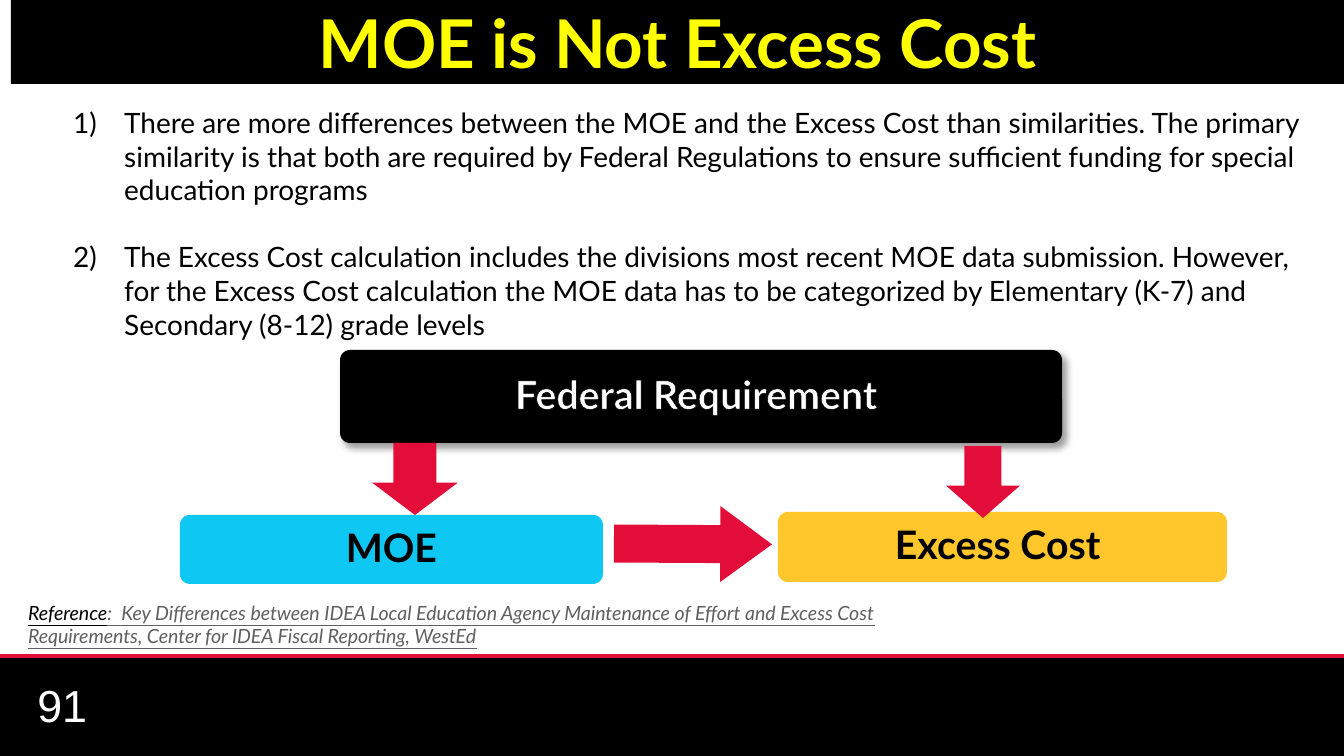
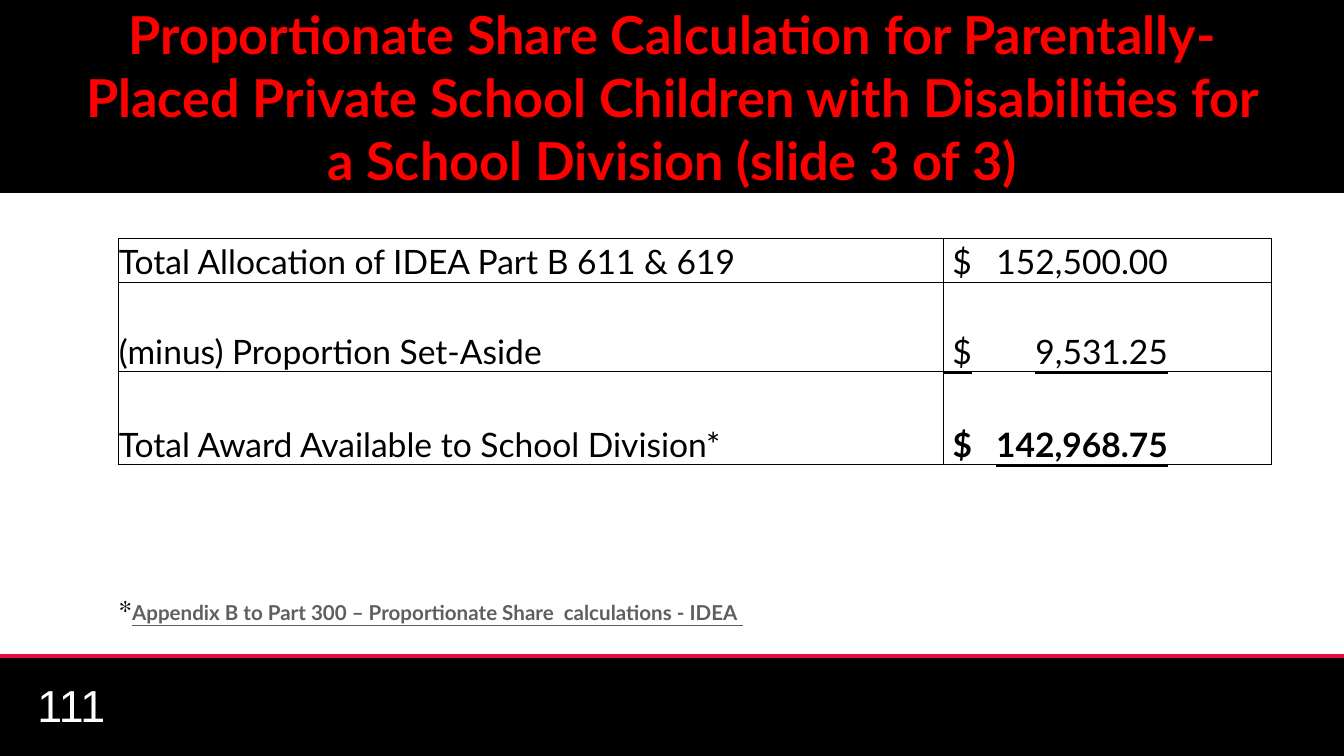
from dataclasses import dataclass, replace

from lxml.etree import SubElement
from pptx import Presentation
from pptx.dml.color import RGBColor as Color
from pptx.enum.shapes import MSO_CONNECTOR as Connector, MSO_SHAPE as Preset
from pptx.enum.text import MSO_ANCHOR as Anchor, PP_ALIGN as Align
from pptx.oxml.ns import qn
from pptx.util import Emu, Pt

SLIDE_WIDTH, SLIDE_HEIGHT = 1344, 756
SCALE = 9144000 / SLIDE_WIDTH
NO_TABLE_STYLE = "{2D5ABB26-0587-4C30-8999-92F81FD0307C}"


@dataclass(frozen=True)
class Theme:
    black: Color = Color(0, 0, 0)
    white: Color = Color(255, 255, 255)
    crimson: Color = Color.from_string("E20D38")
    yellow: Color = Color.from_string("FFFF00")
    red: Color = Color.from_string("FF0000")
    gold: Color = Color.from_string("FFC72C")
    cyan: Color = Color.from_string("0EC7F2")
    gray: Color = Color.from_string("5F5F5F")
    body_font: str = "Lato"
    number_font: str = "Arial"
    mark_font: str = "TeX Gyre Schola"
    title_size: float = 36
    long_title_size: float = 28
    number_size: float = 24
    box_size: float = 21
    table_size: float = 18
    body_size: float = 15
    mark_size: float = 14
    note_size: float = 11
    reference_size: float = 10.5


THEME = Theme()


@dataclass(frozen=True)
class TextStyle:
    size: float
    color: Color = THEME.black
    font: str = THEME.body_font
    bold: bool = False
    italic: bool = False
    underline: bool = False
    outlined: bool = False


def px(length):
    return Emu(round(length * SCALE))


def box(*lengths):
    return [px(length) for length in lengths]


# Text
def add_run(paragraph, text, style):
    run = paragraph.add_run()
    run.text = text
    font = run.font
    font.name, font.size = style.font, Pt(style.size)
    font.bold, font.italic, font.underline = style.bold, style.italic, style.underline
    font.color.rgb = style.color
    if style.outlined:
        line = SubElement(font._element, qn("a:ln"), w=str(Pt(0.75)))
        fill = SubElement(line, qn("a:solidFill"))
        SubElement(fill, qn("a:srgbClr"), val=str(THEME.black))
        font._element.insert(0, line)


def set_insets(holder, left, top, right, bottom):
    holder.margin_left, holder.margin_top = px(left), px(top)
    holder.margin_right, holder.margin_bottom = px(right), px(bottom)


def add_text_box(slide, bounds, anchor=Anchor.TOP):
    frame = slide.shapes.add_textbox(*box(*bounds)).text_frame
    frame.word_wrap = True
    frame.vertical_anchor = anchor
    return frame


def number_paragraph(paragraph, indent):
    properties = paragraph._p.get_or_add_pPr()
    properties.set("marL", str(px(indent)))
    properties.set("indent", str(-px(indent)))
    SubElement(properties, qn("a:buFont"), typeface="+mj-lt")
    SubElement(properties, qn("a:buAutoNum"), type="arabicParenR")


def add_right_tab(paragraph, position):
    tabs = SubElement(paragraph._p.get_or_add_pPr(), qn("a:tabLst"))
    SubElement(tabs, qn("a:tab"), pos=str(px(position)), algn="r")


# Shapes
def add_filled_shape(slide, preset, bounds, color, adjustments=()):
    shape = slide.shapes.add_shape(preset, *box(*bounds))
    shape.shadow.inherit = False
    shape.fill.solid()
    shape.fill.fore_color.rgb = color
    shape.line.fill.background()
    for index, value in enumerate(adjustments):
        shape.adjustments[index] = value
    return shape


def write_centered(shape, text, style, insets, line_spacing=1.0):
    frame = shape.text_frame
    frame.word_wrap = True
    frame.vertical_anchor = Anchor.MIDDLE
    set_insets(frame, *insets)
    paragraph = frame.paragraphs[0]
    paragraph.alignment = Align.CENTER
    paragraph.line_spacing = line_spacing
    add_run(paragraph, text, style)


def add_label_box(slide, bounds, text, fill, text_color):
    radius = 10 / bounds[3]
    shape = add_filled_shape(slide, Preset.ROUNDED_RECTANGLE, bounds, fill, [radius])
    style = TextStyle(THEME.box_size, text_color, bold=True, outlined=True)
    write_centered(shape, text, style, (13, 13, 13, 13), 0.9)
    return shape


def add_drop_shadow(shape):
    effects = shape._element.spPr.find(qn("a:effectLst"))
    shadow = SubElement(effects, qn("a:outerShdw"), blurRad=str(Pt(4)),
                        dist=str(Pt(3)), dir="2700000", algn="tl", rotWithShape="0")
    color = SubElement(shadow, qn("a:srgbClr"), val=str(THEME.black))
    SubElement(color, qn("a:alpha"), val="40000")


# Parts shared by both slides
def add_base_slide(presentation, number):
    slide = presentation.slides.add_slide(presentation.slide_layouts[6])
    add_filled_shape(slide, Preset.RECTANGLE, (-38, 656, 1420, 100), THEME.black)
    rule = slide.shapes.add_connector(Connector.STRAIGHT, *box(-39, 656, 1382, 656))
    rule.line.color.rgb = THEME.crimson
    rule.line.width = Pt(2)
    SubElement(rule._element.spPr, qn("a:effectLst"))
    frame = add_text_box(slide, (24, 685, 313, 40), Anchor.MIDDLE)
    add_run(frame.paragraphs[0], str(number),
            TextStyle(THEME.number_size, THEME.white, THEME.number_font))
    return slide


def add_title(slide, bounds, text, size, color):
    band = add_filled_shape(slide, Preset.RECTANGLE, bounds, THEME.black)
    write_centered(band, text, TextStyle(size, color, bold=True), (67, 0, 67, 0))


# Table
def add_cell_borders(cell, sides):
    properties = cell._tc.get_or_add_tcPr()
    for side in sides:
        line = SubElement(properties, qn(f"a:ln{side}"), w=str(Pt(0.5)))
        fill = SubElement(line, qn("a:solidFill"))
        SubElement(fill, qn("a:srgbClr"), val=str(THEME.black))


def add_plain_table(slide, left, top, widths, heights):
    frame = slide.shapes.add_table(
        len(heights), len(widths), *box(left, top, sum(widths), sum(heights)))
    table = frame.table
    table.first_row = table.horz_banding = False
    table._tbl.tblPr.find(qn("a:tableStyleId")).text = NO_TABLE_STYLE
    for column, width in zip(table.columns, widths):
        column.width = px(width)
    for row, height in zip(table.rows, heights):
        row.height = px(height)
    return table


def style_cell(cell, sides):
    set_insets(cell, 1, 1, 1, 0)
    cell.vertical_anchor = Anchor.BOTTOM
    add_cell_borders(cell, sides)
    cell.fill.background()


# Slides
def build_excess_cost_slide(presentation):
    slide = add_base_slide(presentation, 91)
    add_title(slide, (11, 0, 1333, 84), "MOE is Not Excess Cost",
              THEME.title_size, THEME.yellow)

    # Requirement diagram
    federal = add_label_box(slide, (340, 350, 722, 93), "Federal Requirement ",
                            THEME.black, THEME.white)
    add_drop_shadow(federal)
    add_label_box(slide, (778, 512, 449, 70), "Excess Cost ", THEME.gold, THEME.black)
    add_label_box(slide, (180, 515, 423, 69), "MOE", THEME.cyan, THEME.black)
    moe_to_cost = add_filled_shape(slide, Preset.RIGHT_ARROW, (614, 506, 158, 76),
                                   THEME.crimson, (0.5, 0.68))
    moe_to_cost.rotation = 0.3
    for bounds in ((372, 443, 86, 72), (946, 446, 74, 72)):
        add_filled_shape(slide, Preset.DOWN_ARROW, bounds, THEME.crimson, (0.5, 0.45))

    # Numbered points
    points = (
        "There are more differences between the MOE and the Excess Cost than "
        "similarities. The primary similarity is that both are required by Federal "
        "Regulations to ensure sufficient funding for special education programs",
        "The Excess Cost calculation includes the divisions most recent MOE data "
        "submission. However, for the Excess Cost calculation the MOE data has to be "
        "categorized by Elementary (K-7) and Secondary (8-12) grade levels",
    )
    frame = add_text_box(slide, (60, 99, 1266, 251))
    for index, point in enumerate(points):
        paragraph = frame.add_paragraph() if index else frame.paragraphs[0]
        number_paragraph(paragraph, 51)
        if index:
            paragraph.space_before = Pt(18)
        add_run(paragraph, point, TextStyle(THEME.body_size))

    # Reference
    reference = add_text_box(slide, (15, 594, 917, 60)).paragraphs[0]
    style = TextStyle(THEME.reference_size, italic=True, underline=True)
    add_run(reference, "Reference", style)
    add_run(reference, ":  Key Differences between IDEA Local Education Agency "
            "Maintenance of Effort and Excess Cost Requirements, Center for IDEA "
            "Fiscal Reporting, WestEd", replace(style, color=THEME.gray))


def build_share_slide(presentation):
    slide = add_base_slide(presentation, 111)
    add_title(slide, (0, 0, SLIDE_WIDTH, 193),
              "Proportionate Share Calculation for Parentally-Placed Private School "
              "Children with Disabilities for a School Division (slide 3 of 3)",
              THEME.long_title_size, THEME.red)

    # Award calculation
    plain = TextStyle(THEME.table_size)
    bold = replace(plain, bold=True)
    amounts = (
        ("Total Allocation of IDEA Part B 611 & 619", [(" $\t152,500.00", plain)]),
        ("(minus) Proportion Set-Aside",
         [(" $\t9,531.25", replace(plain, underline=True))]),
        ("Total Award Available to School Division*",
         [(" ", plain), ("$\t", bold), ("142,968.75", replace(bold, underline=True))]),
    )
    table = add_plain_table(slide, 118, 238, (825, 328), (44, 90, 93, 51, 55, 58))
    for row in range(len(table.rows)):
        sides = "LRTB" if row < len(amounts) else ""
        for column in range(len(table.columns)):
            style_cell(table.cell(row, column), sides)
    for row, (label, runs) in enumerate(amounts):
        add_run(table.cell(row, 0).text_frame.paragraphs[0], label, plain)
        amount = table.cell(row, 1).text_frame.paragraphs[0]
        add_right_tab(amount, 224)
        for text, style in runs:
            add_run(amount, text, style)

    # Footnote in the last row
    note_cell = table.cell(5, 0)
    note_cell.merge(table.cell(5, 1))
    note = note_cell.text_frame.paragraphs[0]
    add_run(note, "*", TextStyle(THEME.mark_size, font=THEME.mark_font))
    add_run(note, "Appendix B to Part 300 – Proportionate Share  calculations - IDEA ",
            TextStyle(THEME.note_size, THEME.gray, bold=True, underline=True))


def main():
    presentation = Presentation()
    presentation.slide_width = px(SLIDE_WIDTH)
    presentation.slide_height = px(SLIDE_HEIGHT)
    build_excess_cost_slide(presentation)
    build_share_slide(presentation)
    presentation.save("out.pptx")


if __name__ == "__main__":
    main()
